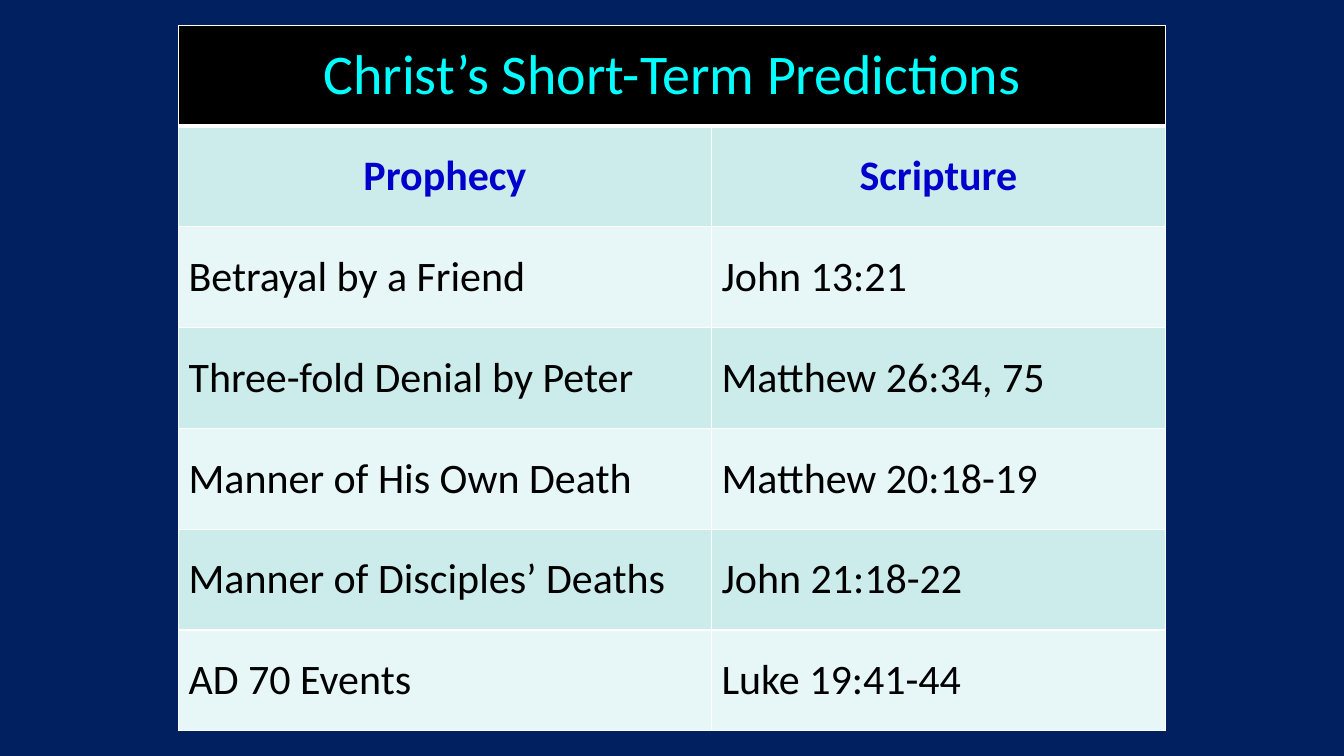
from pptx import Presentation, util as u
from pptx.dml.color import RGBColor
from pptx.enum import text
from pptx.oxml import parse_xml
from pptx.oxml.ns import nsdecls

NAVY = RGBColor(0x00, 0x20, 0x60)
BLACK = RGBColor(0x00, 0x00, 0x00)
WHITE = RGBColor(0xFF, 0xFF, 0xFF)
CYAN = RGBColor(0x00, 0xFF, 0xFF)
BLUE = RGBColor(0x00, 0x00, 0xCC)
TEAL = RGBColor(0xCC, 0xEC, 0xEC)
PALE = RGBColor(0xE7, 0xF6, 0xF6)
FONT = "Calibri"

TITLE = "Christ’s Short-Term Predictions"
HEADS = ("Prophecy", "Scripture")
ITEMS = [
    ("Betrayal by a Friend", "John 13:21"),
    ("Three-fold Denial by Peter", "Matthew 26:34, 75"),
    ("Manner of His Own Death", "Matthew 20:18-19"),
    ("Manner of Disciples’ Deaths", "John 21:18-22"),
    ("AD 70 Events", "Luke 19:41-44"),
]


def rule(cell, top, low):
    """Draw the four cell borders; top and low are widths in points."""
    props = cell._tc.get_or_add_tcPr()
    for side, pts in (("L", 1), ("R", 1), ("T", top), ("B", low)):
        props.append(parse_xml(
            f'<a:ln{side} {nsdecls("a")} w="{u.Pt(pts)}"><a:solidFill>'
            f'<a:srgbClr val="{WHITE}"/></a:solidFill></a:ln{side}>'))


def paint(cell, fill):
    cell.fill.solid()
    cell.fill.fore_color.rgb = fill
    cell.vertical_anchor = text.MSO_ANCHOR.MIDDLE


def write(cell, words, size, color, bold=False, mid=False):
    cell.text_frame.text = words
    para = cell.text_frame.paragraphs[0]
    para.alignment = text.PP_ALIGN.CENTER if mid else text.PP_ALIGN.LEFT
    font = para.runs[0].font
    font.name, font.size, font.bold = FONT, u.Pt(size), bold
    font.color.rgb = color


def add_grid(slide, left, top, width, height):
    lines = [HEADS] + ITEMS
    count = len(lines) + 1
    grid = slide.shapes.add_table(count, 2, left, top, width, height).table

    # Column shares and equal rows
    for col, share in zip(grid.columns, (0.54, 0.46)):
        col.width = int(width * share)
    for row in grid.rows:
        row.height = int(height / count)

    # Title band across both columns
    for cell in grid.rows[0].cells:
        rule(cell, 1, 3)
        paint(cell, BLACK)
    grid.cell(0, 0).merge(grid.cell(0, 1))
    write(grid.cell(0, 0), TITLE, 40, CYAN, mid=True)

    # Headings and banded entries
    for r, line in enumerate(lines, 1):
        head = r == 1
        for c, words in enumerate(line):
            cell = grid.cell(r, c)
            rule(cell, 3 if head else 1, 1)
            paint(cell, TEAL if r % 2 else PALE)
            write(cell, words, 30, BLUE if head else BLACK, head, head)


def main():
    deck = Presentation()
    deck.slide_width, deck.slide_height = u.Inches(13.33), u.Inches(7.5)
    slide = deck.slides.add_slide(deck.slide_layouts[6])
    slide.background.fill.solid()
    slide.background.fill.fore_color.rgb = NAVY
    add_grid(slide, u.Inches(1.77), u.Inches(0.25),
             u.Inches(9.79), u.Inches(7))
    deck.save("out.pptx")


if __name__ == "__main__":
    main()
